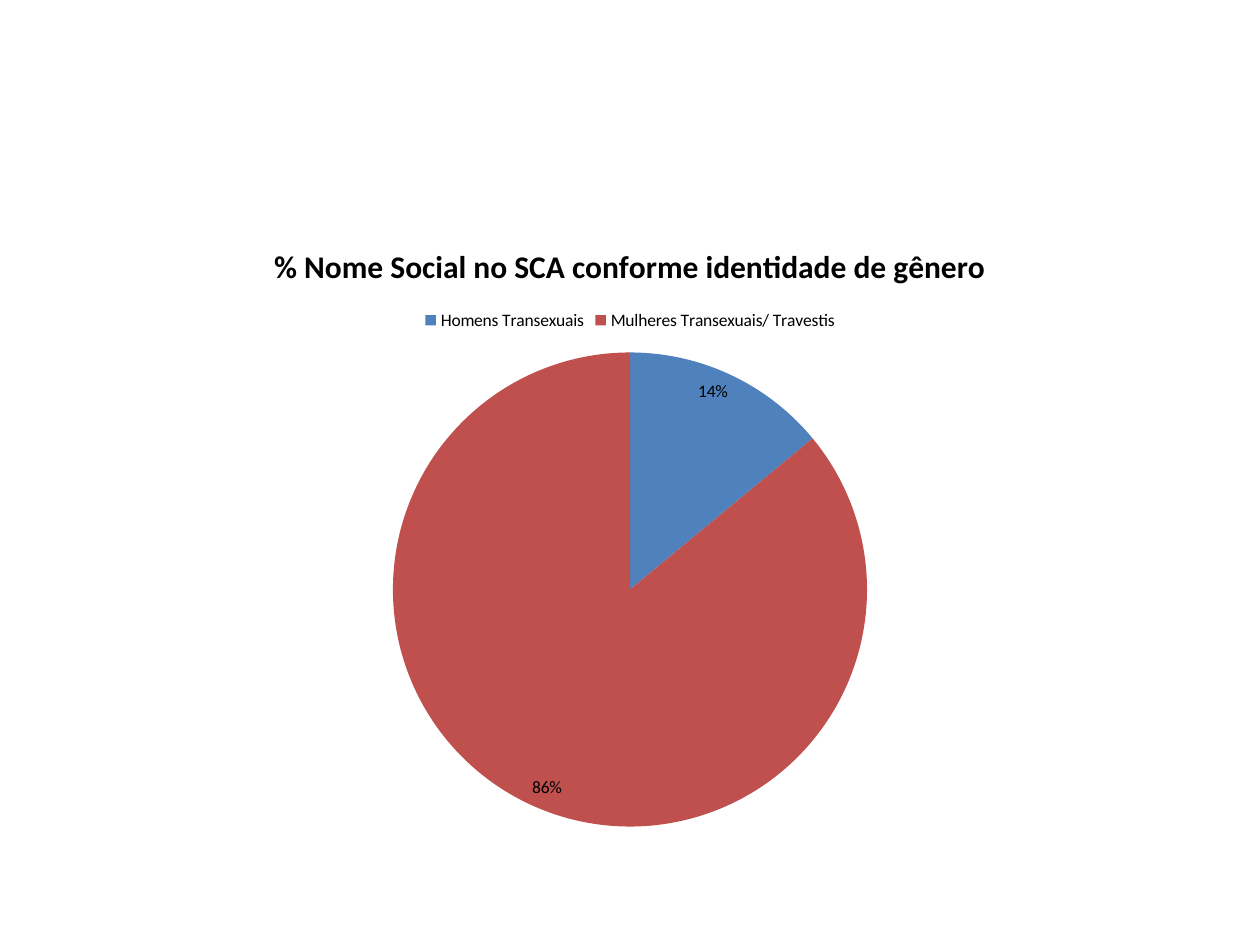
import pptx
import pptx.chart.data
import pptx.dml.color
import pptx.enum.chart
import pptx.util

PX_PER_INCH = 126
COLORS = {"text": "000000", "men": "4F81BD", "women": "C0504D"}
SHARES = {
    "Homens Transexuais": (14, "men"),
    "Mulheres Transexuais/ Travestis": (86, "women"),
}


def px(n):
    return pptx.util.Emu(round(n * pptx.util.Inches(1) / PX_PER_INCH))


def rgb(name):
    return pptx.dml.color.RGBColor.from_string(COLORS[name])


def format_font(font, size, bold=False):
    values = {"name": "Calibri", "size": pptx.util.Pt(size), "bold": bold}
    for key, value in values.items():
        setattr(font, key, value)
    font.color.rgb = rgb("text")


def add_identity_pie(s, left, top, width, height):
    data = pptx.chart.data.CategoryChartData()
    data.categories = list(SHARES)
    data.add_series("Series 1", [value for value, _ in SHARES.values()])
    chart = s.shapes.add_chart(
        pptx.enum.chart.XL_CHART_TYPE.PIE,
        px(left), px(top), px(width), px(height), data,
    ).chart
    format_font(chart.font, 10)

    chart.has_title = True
    tf = chart.chart_title.text_frame
    tf.text = "% Nome Social no SCA conforme identidade de gênero"
    format_font(tf.paragraphs[0].runs[0].font, 18, bold=True)
    chart.chart_title.include_in_layout = False

    chart.has_legend = True
    chart.legend.position = pptx.enum.chart.XL_LEGEND_POSITION.TOP
    chart.legend.include_in_layout = False

    plot = chart.plots[0]
    plot.vary_by_categories = True
    for i, (_, color) in enumerate(SHARES.values()):
        fill = plot.series[0].points[i].format.fill
        fill.solid()
        fill.fore_color.rgb = rgb(color)

    plot.has_data_labels = True
    labels = {
        "show_percentage": True,
        "show_value": False,
        "number_format": "0%",
        "number_format_is_linked": False,
        "position": pptx.enum.chart.XL_LABEL_POSITION.INSIDE_END,
    }
    for key, value in labels.items():
        setattr(plot.data_labels, key, value)


def main():
    prs = pptx.Presentation()
    prs.slide_width, prs.slide_height = px(1260), px(945)
    s = prs.slides.add_slide(prs.slide_layouts[6])
    add_identity_pie(s, 63, 220, 1134, 624)
    prs.save("out.pptx")


if __name__ == "__main__":
    main()
